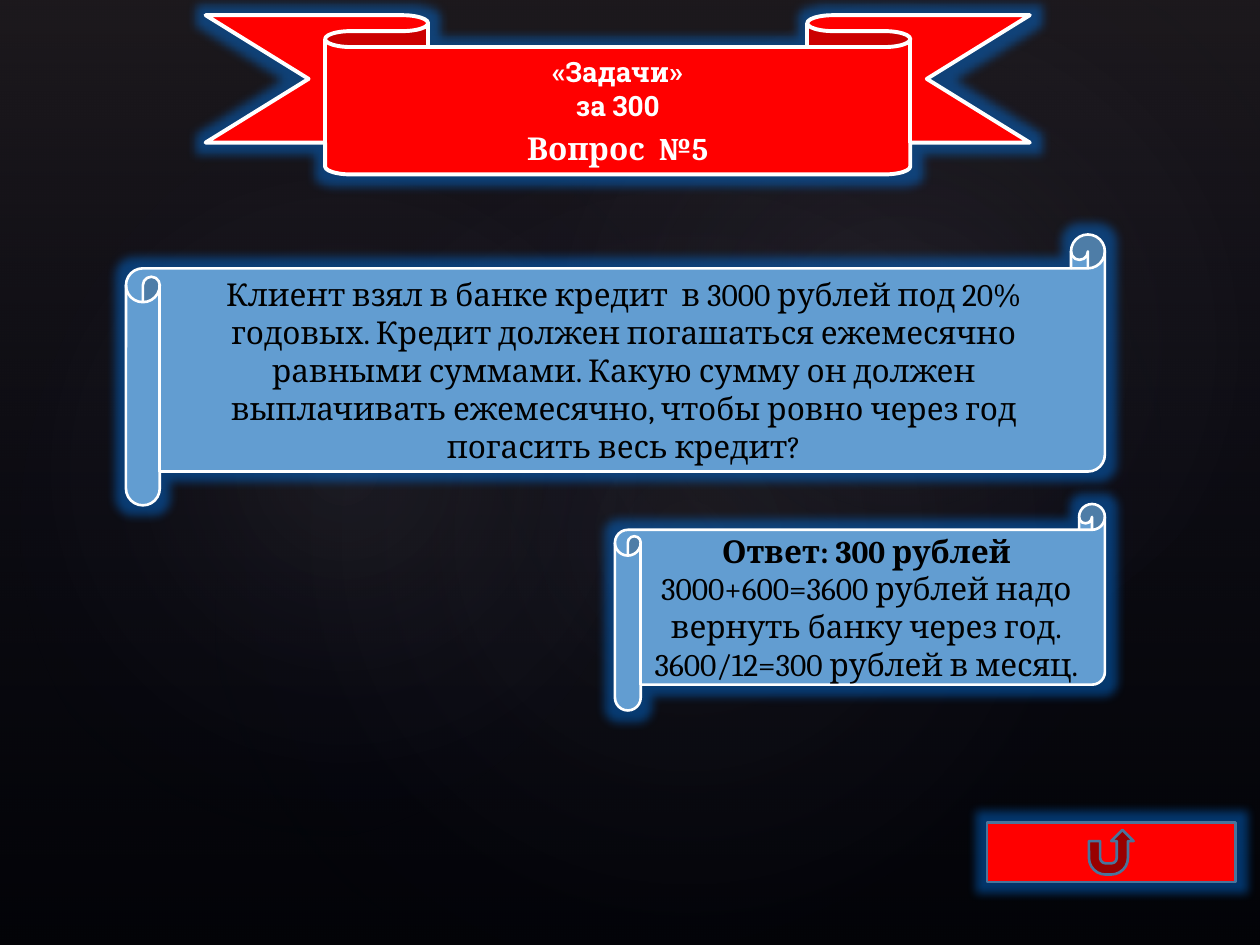
from pptx import Presentation
from pptx.dml.color import RGBColor
from pptx.enum.shapes import MSO_SHAPE
from pptx.enum.text import MSO_ANCHOR, PP_ALIGN
from pptx.oxml.ns import qn
from pptx.util import Pt
from lxml.etree import SubElement


def rgb(code):
    """Turn a hex string into a colour."""
    return RGBColor.from_string(code)


def tint(parent, code, alpha):
    """Add a see-through colour element, alpha in percent."""
    clr = SubElement(parent, qn("a:srgbClr"), val=code)
    SubElement(clr, qn("a:alpha"), val=str(alpha * 1000))


def place(slide, kind, box):
    """Add a shape without shadow in a box of points."""
    shape = slide.shapes.add_shape(kind, *map(Pt, box))
    shape.shadow.inherit = False
    return shape


def fade(shape, stops, round_=False):
    """Fill a shape with a linear or round gradient and no line."""
    shape.line.fill.background()
    shape.fill.gradient()
    grad = shape._element.spPr.find(qn("a:gradFill"))
    for child in list(grad):
        grad.remove(child)
    stop_list = SubElement(grad, qn("a:gsLst"))
    for pos, code, alpha in stops:
        tint(SubElement(stop_list, qn("a:gs"), pos=str(pos * 1000)), code, alpha)
    if round_:
        path = SubElement(grad, qn("a:path"), path="circle")
        SubElement(path, qn("a:fillToRect"), dict.fromkeys("ltrb", "50000"))
    else:
        SubElement(grad, qn("a:lin"), ang="5400000", scaled="0")


def backdrop(slide, box):
    """Paint the dark ground with its soft lights."""
    slide.background.fill.solid()
    slide.background.fill.fore_color.rgb = rgb("000000")
    fade(place(slide, MSO_SHAPE.RECTANGLE, box),
         [(0, "504652", 36), (100, "242852", 10)])
    left, top = box[:2]
    lights = [(108, 82, 570, 449, 328.7, 7), (-22, 92, 436, 353, 294.3, 8),
              (258, 9, 510, 374, 328.7, 8)]
    for x, y, wide, high, turn, alpha in lights:
        light = place(slide, MSO_SHAPE.OVAL, (left + x, top + y, wide, high))
        light.rotation = turn
        fade(light, [(0, "C4BCC6", alpha), (58, "242852", 0)], True)


def panel(slide, kind, box, fill, line, width):
    """Add a glowing outlined shape."""
    shape = place(slide, kind, box)
    shape.fill.solid()
    shape.fill.fore_color.rgb = rgb(fill)
    shape.line.color.rgb = rgb(line)
    shape.line.width = Pt(width)
    effects = shape._element.spPr.find(qn("a:effectLst"))
    tint(SubElement(effects, qn("a:glow"), rad=str(Pt(11))), "0080FF", 40)
    return shape


def write(shape, lines, code):
    """Write centred lines of text, size, font, bold and space before."""
    frame = shape.text_frame
    frame.word_wrap = True
    frame.vertical_anchor = MSO_ANCHOR.MIDDLE
    for i, (text, size, face, bold, gap) in enumerate(lines):
        para = frame.add_paragraph() if i else frame.paragraphs[0]
        para.alignment = PP_ALIGN.CENTER
        if gap:
            para.space_before = Pt(gap)
        run = para.add_run()
        run.text = text
        font = run.font
        font.size, font.name, font.bold = Pt(size), face, bold
        font.color.rgb = rgb(code)


def banner(slide, box):
    """Draw the red ribbon with the heading."""
    ribbon = panel(slide, MSO_SHAPE.DOWN_RIBBON, box, "FF0000", "FFFFFF", 2.25)
    ribbon.adjustments[0] = 0.2
    ribbon.adjustments[1] = 0.71
    write(ribbon, [("«Задачи»", 16, "Roboto Slab", True, 0),
                   ("за 300", 16, "Roboto Slab", True, 0),
                   ("Вопрос  №5", 18, "Cambria", True, 4)], "FFFFFF")


def scroll(slide, box, lines):
    """Draw a blue scroll with lines of text and bold flags."""
    sheet = panel(slide, MSO_SHAPE.HORIZONTAL_SCROLL, box, "629DD1", "FFFFFF", 1.5)
    write(sheet, [(text, 18, "Cambria", bold, 0) for text, bold in lines], "000000")


def button(slide, box):
    """Draw the red return button."""
    panel(slide, MSO_SHAPE.ACTION_BUTTON_RETURN, box, "FF0000", "49749B", 1.5)


def main():
    """Build and save the slide."""
    deck = Presentation()
    deck.slide_width, deck.slide_height = Pt(720), Pt(540)
    slide = deck.slides.add_slide(deck.slide_layouts[6])
    backdrop(slide, (0, 0, 720, 540))
    banner(slide, (117.5, 8.7, 471, 91))
    button(slide, (564, 470, 142, 34))
    scroll(slide, (72, 134, 559.4, 154.8), [
        ("Клиент взял в банке кредит  в 3000 рублей под 20% годовых. "
         "Кредит должен погашаться ежемесячно равными суммами. "
         "Какую сумму он должен выплачивать ежемесячно, "
         "чтобы ровно через год погасить весь кредит?", False)])
    scroll(slide, (351.4, 288, 280, 118), [
        ("Ответ: 300 рублей", True),
        ("3000+600=3600 рублей надо вернуть банку через год.", False),
        ("3600/12=300 рублей в месяц.", False)])
    deck.save("out.pptx")


if __name__ == "__main__":
    main()
